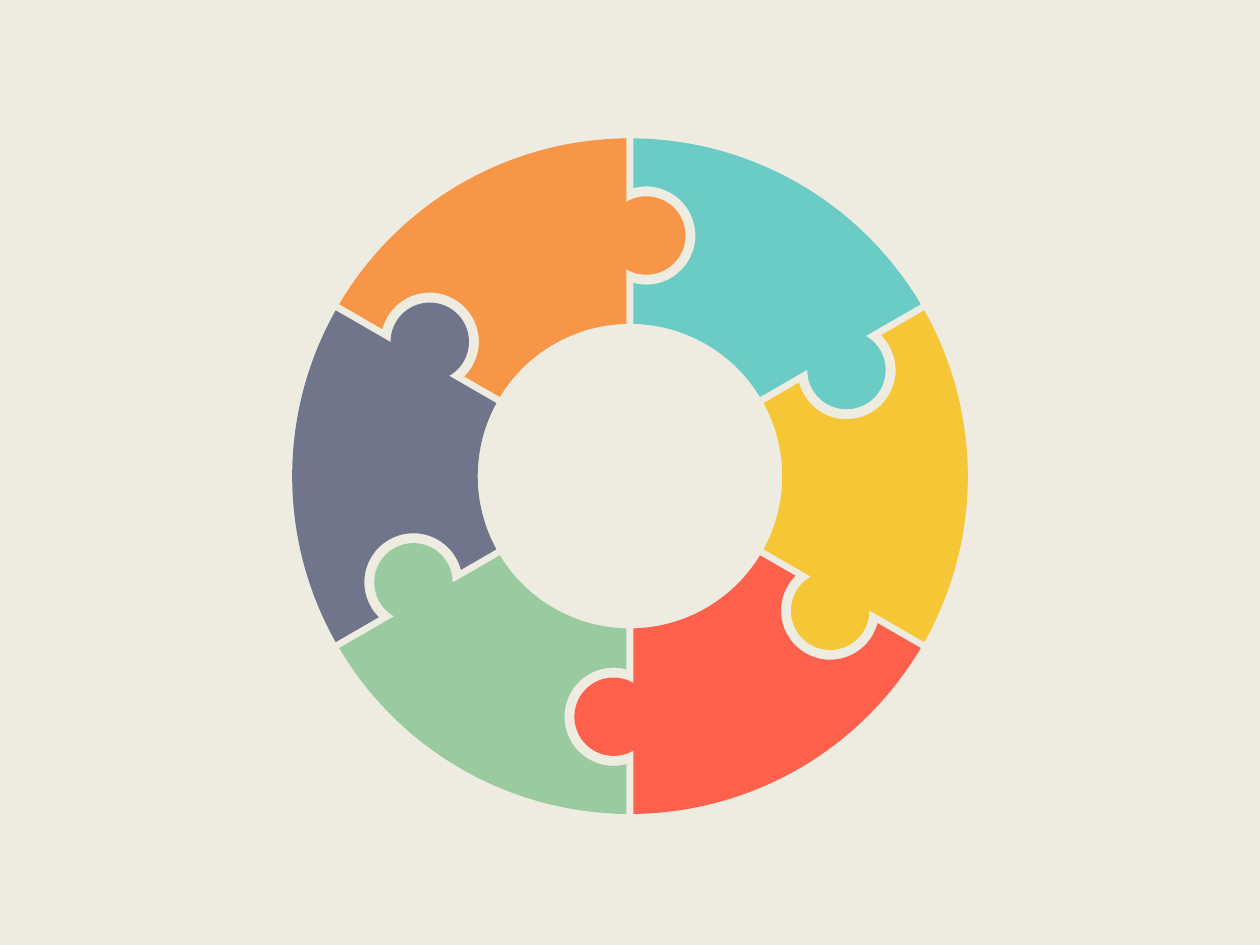
from math import asin, cos, degrees, radians, sin, tan

from lxml.etree import SubElement
from pptx import Presentation
from pptx.dml.color import RGBColor
from pptx.oxml.ns import qn
from pptx.util import Cm

COLOURS = {
    "background": "EEECE1",
    "teal": "6BCBC5",
    "green": "9ACA9F",
    "red": "FF614C",
    "slate": "70758C",
    "yellow": "F5C636",
    "orange": "F79646",
}
# Degrees clockwise from the top at which each piece begins, back to front
PIECE_ANGLES = {
    "teal": 0, "green": 180, "red": 120, "slate": 240, "yellow": 60, "orange": 300,
}
STEP = 60

# Lengths in centimetres; the ring is centred on (0, 0) until it is placed.
RING_X, RING_Y = 12.7, 9.6
OUTER, INNER = 6.81, 3.07
HALF_GAP = 0.07
KNOB_X, KNOB_Y = 0.33, -4.85
KNOB, SOCKET = 0.79, 0.99


def arc(x, y, radius, start, end, count):
    """Start point, then two controls and an end point per Bezier curve.

    Angles are in degrees, clockwise from the top.
    """
    sweep = radians(end - start) / count
    reach = 4 / 3 * tan(sweep / 4)
    points = []
    for i in range(count + 1):
        s, c = sin(radians(start) + i * sweep), cos(radians(start) + i * sweep)
        points += [
            (x + radius * (s - reach * c), y - radius * (c + reach * s)),
            (x + radius * s, y - radius * c),
            (x + radius * (s + reach * c), y - radius * (c - reach * s)),
        ]
    return points[1:-1]


def rotate(points, angle):
    c, s = cos(radians(angle)), sin(radians(angle))
    return [(x * c - y * s, x * s + y * c) for x, y in points]


prs = Presentation()
prs.slide_width, prs.slide_height = Cm(25.4), Cm(19.05)
slide = prs.slides.add_slide(prs.slide_layouts[6])
slide.background.fill.solid()
slide.background.fill.fore_color.rgb = RGBColor.from_string(COLOURS["background"])

# Angles at which each circle meets the straight edge of its piece
outer_trim = degrees(asin(HALF_GAP / OUTER))
inner_trim = degrees(asin(HALF_GAP / INNER))
knob_trim = degrees(asin((KNOB_X + HALF_GAP) / KNOB))
socket_trim = degrees(asin((KNOB_X - HALF_GAP) / SOCKET))

rim = arc(0, 0, OUTER, outer_trim, STEP - outer_trim, 2)
knob = rotate(arc(KNOB_X, KNOB_Y, KNOB, -knob_trim, 180 + knob_trim, 3), STEP)
hole = arc(0, 0, INNER, STEP - inner_trim, inner_trim, 2)
socket = arc(KNOB_X, KNOB_Y, SOCKET, 180 + socket_trim, -socket_trim, 3)

for colour, angle in PIECE_ANGLES.items():
    curves = [
        [(Cm(RING_X + x), Cm(RING_Y + y)) for x, y in rotate(part, angle)]
        for part in (rim, knob, hole, socket)
    ]
    anchors = [point for curve in curves for point in curve[::3]]
    builder = slide.shapes.build_freeform(*anchors[0])
    builder.add_line_segments(anchors[1:], close=True)
    piece = builder.convert_to_shape()
    piece.shadow.inherit = False
    piece.fill.solid()
    piece.fill.fore_color.rgb = RGBColor.from_string(COLOURS[colour])
    piece.line.fill.background()

    # Replace the straight segments between anchors by the curves
    outline = next(piece._element.iter(qn("a:path")))
    for segment in list(outline):
        outline.remove(segment)
    for number, curve in enumerate(curves):
        segments = [("a:lnTo" if number else "a:moveTo", curve[:1])]
        segments += [
            ("a:cubicBezTo", curve[i:i + 3]) for i in range(1, len(curve), 3)
        ]
        for tag, points in segments:
            segment = SubElement(outline, qn(tag))
            for x, y in points:
                SubElement(
                    segment, qn("a:pt"), x=str(x - piece.left), y=str(y - piece.top)
                )
    SubElement(outline, qn("a:close"))

prs.save("out.pptx")
